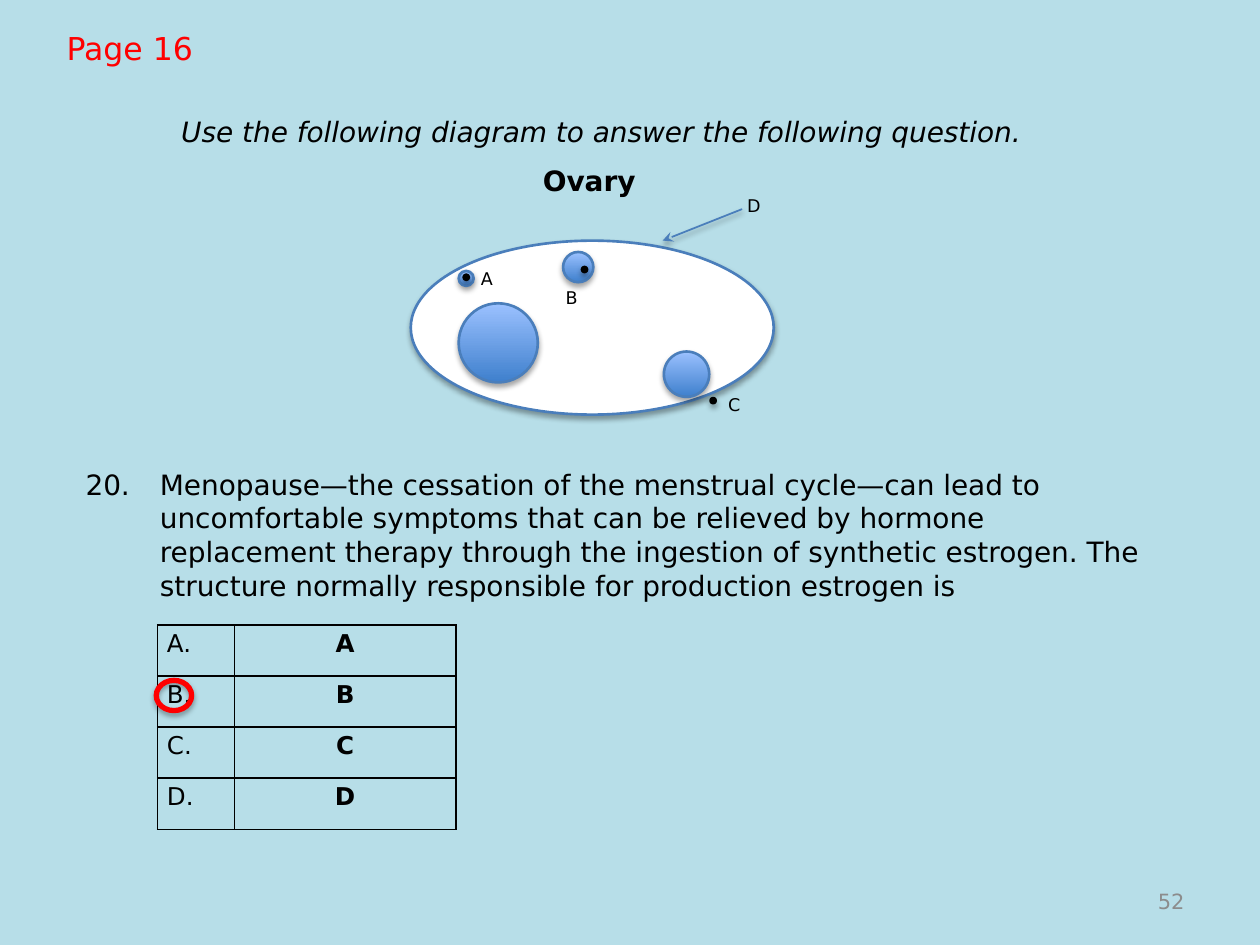
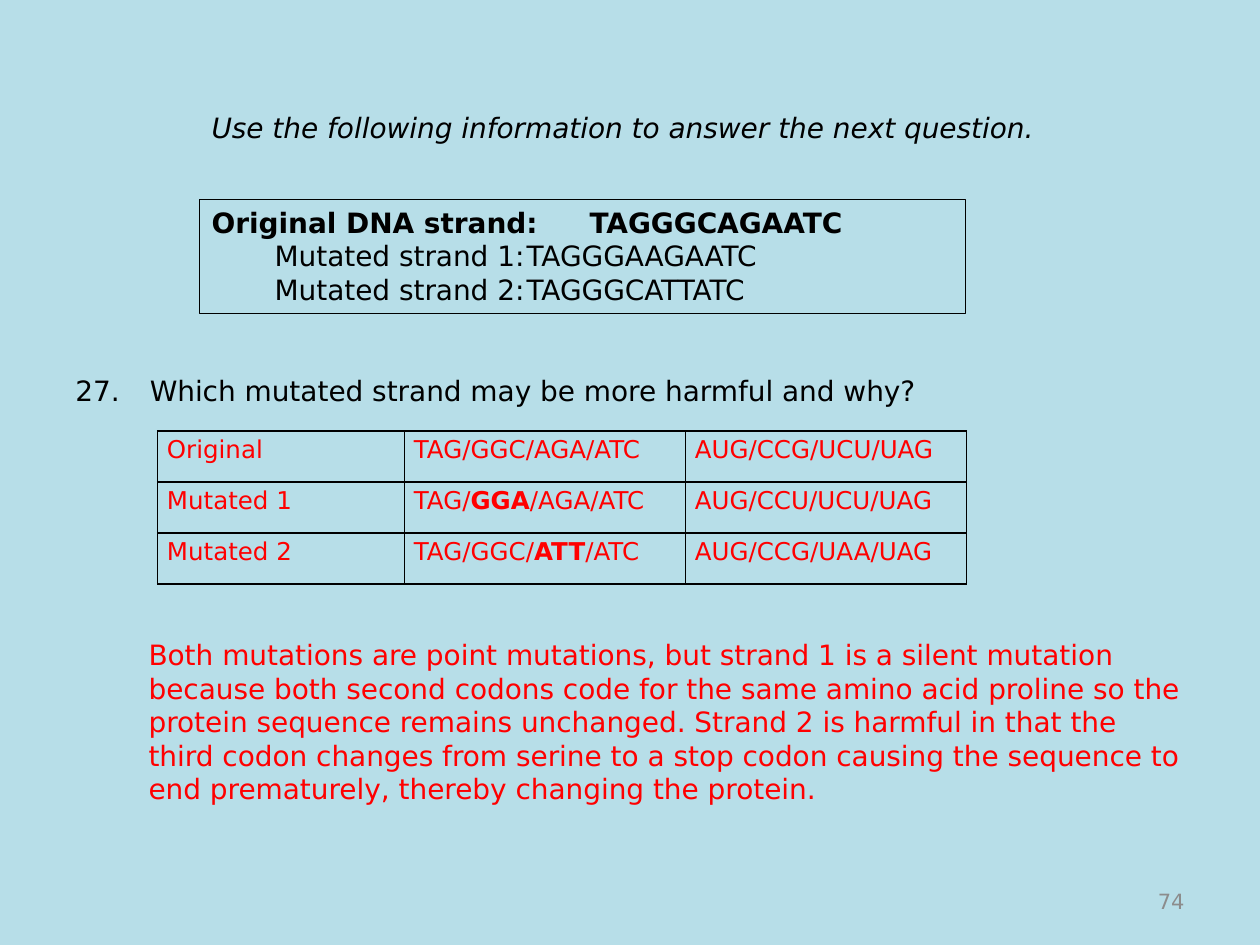
from dataclasses import dataclass

import pptx
import pptx.dml.color
import pptx.enum.shapes
import pptx.enum.text
import pptx.oxml.ns
import pptx.util
from lxml import etree

Pt = pptx.util.Pt
ALIGN = pptx.enum.text.PP_ALIGN
ANCHOR = pptx.enum.text.MSO_ANCHOR


@dataclass(frozen=True)
class Theme:
    font: str = "DejaVu Sans"
    background: str = "B7DEE8"
    ink: str = "000000"
    answer: str = "FF0000"
    muted: str = "8C8C8C"
    white: str = "FFFFFF"
    outline: str = "4A7EBB"
    follicle: tuple = ("9BC1FF", "3F80CD")
    label_size: int = 10
    number_size: int = 12
    table_size: int = 14
    body_size: int = 16
    page_size: int = 18


THEME = Theme()


def rgb(color):
    return pptx.dml.color.RGBColor.from_string(color)


def add_xml(parent, tag, **attributes):
    element = etree.SubElement(parent, pptx.oxml.ns.qn(tag))
    for name, value in attributes.items():
        element.set(name, str(value))
    return element


# Text
def write_text(frame, text, size=THEME.body_size, color=THEME.ink, italic=False, bold=False,
               align=None, line_spacing=None, hanging=0, tabs=()):
    """Fill a frame: one paragraph per line, with *asterisks* around bold parts."""
    for index, line in enumerate(text.split("\n")):
        paragraph = frame.paragraphs[0] if index == 0 else frame.add_paragraph()
        paragraph.alignment = align
        paragraph.line_spacing = line_spacing
        properties = paragraph._p.get_or_add_pPr()
        if hanging:
            properties.set("marL", str(Pt(hanging)))
            properties.set("indent", str(-Pt(hanging)))
        if tabs:
            tab_list = add_xml(properties, "a:tabLst")
            for position in tabs:
                add_xml(tab_list, "a:tab", pos=Pt(position), algn="l")
        for part_index, part in enumerate(line.split("*")):
            if not part:
                continue
            run = paragraph.add_run()
            run.text = part
            run.font.name = THEME.font
            run.font.size = Pt(size)
            run.font.color.rgb = rgb(color)
            run.font.italic = italic
            run.font.bold = bold or part_index % 2 == 1


def add_text_box(shapes, text, left, top, width, height, inset=3.6, anchor=ANCHOR.TOP, **text_format):
    shape = shapes.add_textbox(Pt(left), Pt(top), Pt(width), Pt(height))
    frame = shape.text_frame
    frame.word_wrap = True
    frame.vertical_anchor = anchor
    frame.margin_top = frame.margin_bottom = Pt(inset)
    write_text(frame, text, **text_format)
    return shape


# Drawing
def add_soft_shadow(effects):
    shadow = add_xml(effects, "a:outerShdw", blurRad=Pt(3), dist=Pt(2), dir=5400000, rotWithShape=0)
    add_xml(add_xml(shadow, "a:srgbClr", val=THEME.ink), "a:alpha", val=35000)


def add_oval(shapes, left, top, width, height, fill=None, line=THEME.outline, line_width=1.5):
    """Draw an oval; fill is a colour, a pair of gradient colours or None."""
    shape = shapes.add_shape(pptx.enum.shapes.MSO_SHAPE.OVAL, Pt(left), Pt(top), Pt(width), Pt(height))
    if fill is None:
        shape.fill.background()
    elif isinstance(fill, tuple):
        shape.fill.gradient()
        shape.fill.gradient_angle = 270
        for stop, color in zip(shape.fill.gradient_stops, fill):
            stop.color.rgb = rgb(color)
    else:
        shape.fill.solid()
        shape.fill.fore_color.rgb = rgb(fill)
    shape.line.color.rgb = rgb(line)
    shape.line.width = Pt(line_width)
    shape.shadow.inherit = False
    add_soft_shadow(shape._element.spPr.find(pptx.oxml.ns.qn("a:effectLst")))


def add_follicle(shapes, left, top, diameter):
    add_oval(shapes, left, top, diameter, diameter, fill=THEME.follicle)


def add_egg(shapes, left, top):
    add_oval(shapes, left, top, 2.9, 2.9, fill=THEME.ink, line=THEME.ink)


def add_arrow(shapes, start, end):
    arrow = shapes.add_connector(pptx.enum.shapes.MSO_CONNECTOR.STRAIGHT,
                                 *(Pt(value) for value in start + end))
    arrow.line.color.rgb = rgb(THEME.outline)
    arrow.line.width = Pt(1)
    add_xml(arrow.line._get_or_add_ln(), "a:tailEnd", type="stealth")
    add_soft_shadow(add_xml(arrow._element.spPr, "a:effectLst"))


def add_ovary_diagram(slide):
    shapes = slide.shapes.add_group_shape().shapes
    add_oval(shapes, 234.7, 137.5, 207.4, 99.4, fill=THEME.white)
    add_arrow(shapes, (424.1, 119.5), (378.7, 137.5))
    for left, top, diameter in ((262.1, 173.3, 45.2), (379.4, 200.9, 25.9),
                                (321.8, 144, 17.3), (262.1, 154.8, 8.6)):
        add_follicle(shapes, left, top, diameter)
    for left, top in ((406.1, 227.5), (332.6, 152.6), (265, 157)):
        add_egg(shapes, left, top)
    for letter, left, top in (("A", 267.8, 146.9), ("B", 316.1, 157.7),
                              ("C", 409, 218.9), ("D", 419.8, 105.1)):
        add_text_box(shapes, letter, left, top, 24.5, 27.4, inset=7.2, size=THEME.label_size)


# Tables
def add_cell_borders(cell):
    properties = cell._tc.get_or_add_tcPr()
    for side in ("a:lnL", "a:lnR", "a:lnT", "a:lnB"):
        border = add_xml(properties, side, w=Pt(1))
        add_xml(add_xml(border, "a:solidFill"), "a:srgbClr", val=THEME.ink)


def add_grid(slide, rows, left, top, column_widths, column_formats, row_height=29.2):
    table = slide.shapes.add_table(len(rows), len(column_widths), Pt(left), Pt(top),
                                   Pt(sum(column_widths)), Pt(row_height * len(rows))).table
    table.first_row = table.horz_banding = False
    for column, width in zip(table.columns, column_widths):
        column.width = Pt(width)
    for row, texts in zip(table.rows, rows):
        row.height = Pt(row_height)
        for cell, text, text_format in zip(row.cells, texts, column_formats):
            cell.margin_left = cell.margin_right = Pt(5.4)
            cell.margin_top = cell.margin_bottom = 0
            add_cell_borders(cell)
            cell.fill.background()
            write_text(cell.text_frame, text, size=THEME.table_size, line_spacing=1.15, **text_format)


# Parts that both slides share
def add_quiz_slide(presentation, number):
    slide = presentation.slides.add_slide(presentation.slide_layouts[6])
    slide.background.fill.solid()
    slide.background.fill.fore_color.rgb = rgb(THEME.background)
    add_text_box(slide.shapes, number, 516, 500.4, 168, 28.8, anchor=ANCHOR.MIDDLE,
                 size=THEME.number_size, color=THEME.muted, align=ALIGN.RIGHT)
    return slide


def add_instruction(slide, text, left, top):
    add_text_box(slide.shapes, text, left, top, 560, 26.6, italic=True)


def add_question(slide, number, text, left, top, width, height):
    add_text_box(slide.shapes, f"{number}.\t{text}", left, top, width, height, hanging=42.5)


def build_ovary_slide(presentation):
    slide = add_quiz_slide(presentation, "52")
    add_ovary_diagram(slide)
    add_text_box(slide.shapes, "Ovary", 303.1, 86.4, 90, 36, inset=7.2, bold=True)
    add_instruction(slide, "Use the following diagram to answer the following question.", 96.5, 61.9)
    add_question(slide, 20, "Menopause—the cessation of the menstrual cycle—can lead to uncomfortable "
                 "symptoms that can be relieved by hormone replacement therapy through the ingestion of "
                 "synthetic estrogen. The structure normally responsible for production estrogen is",
                 41.8, 263.5, 623.5, 104.4)
    add_grid(slide, [(f"{letter}.", letter) for letter in "ABCD"], 90, 357.1, (43.9, 126.7),
             ({}, {"bold": True, "align": ALIGN.CENTER}))
    # Ring around the right answer
    add_oval(slide.shapes, 89.3, 388.8, 20.2, 17.3, line=THEME.answer, line_width=3)
    add_text_box(slide.shapes, "Page 16", 31, 13, 131.8, 28.8,
                 size=THEME.page_size, color=THEME.answer)


def build_mutation_slide(presentation):
    slide = add_quiz_slide(presentation, "74")
    strands = add_text_box(slide.shapes, "*Original DNA strand: \tTAGGGCAGAATC*\n"
                           "\tMutated strand 1:\tTAGGGAAGAATC\n"
                           "\tMutated strand 2:\tTAGGGCATTATC",
                           113.8, 113.8, 437.8, 65.5, tabs=(36, 180, 216))
    strands.line.color.rgb = rgb(THEME.ink)
    strands.line.width = Pt(0.75)
    add_instruction(slide, "Use the following information to answer the next question.", 113.8, 59.8)
    add_question(slide, 27, "Which mutated strand may be more harmful and why?", 36, 210.2, 563, 26.6)
    codons = (("Original", "TAG/GGC/AGA/ATC", "AUG/CCG/UCU/UAG"),
              ("Mutated 1", "TAG/*GGA*/AGA/ATC", "AUG/CCU/UCU/UAG"),
              ("Mutated 2", "TAG/GGC/*ATT*/ATC", "AUG/CCG/UAA/UAG"))
    add_grid(slide, codons, 90, 246.2, (141.1, 160.6, 160.6), [{"color": THEME.answer}] * 3)
    add_text_box(slide.shapes, "Both mutations are point mutations, but strand 1 is a silent mutation "
                 "because both second codons code for the same amino acid proline so the protein sequence "
                 "remains unchanged. Strand 2 is harmful in that the third codon changes from serine to a "
                 "stop codon causing the sequence to end prematurely, thereby changing the protein.",
                 77.8, 360.7, 606.2, 123.8, color=THEME.answer)


def main():
    presentation = pptx.Presentation()
    presentation.slide_width = Pt(720)
    presentation.slide_height = Pt(540)
    build_ovary_slide(presentation)
    build_mutation_slide(presentation)
    presentation.save("out.pptx")


if __name__ == "__main__":
    main()
